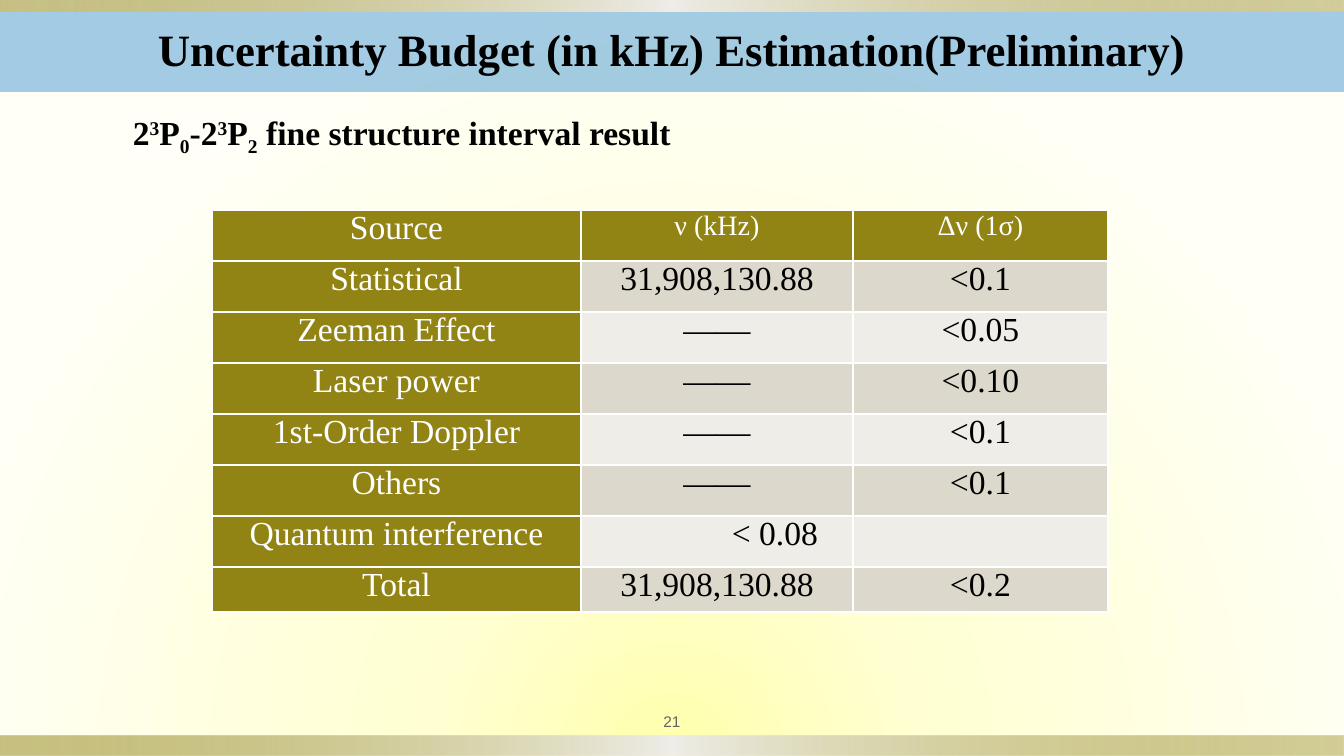
"""Build the uncertainty budget slide with its table of error sources."""
from pptx import Presentation
from pptx.dml.color import RGBColor as RGB
from pptx.enum.shapes import MSO_SHAPE as SHAPE
from pptx.enum.text import MSO_ANCHOR as ANCHOR, MSO_AUTO_SIZE as AUTO, PP_ALIGN as ALIGN
from pptx.oxml import parse_xml
from pptx.oxml.ns import nsdecls, qn
from pptx.util import Pt

PX = 12192000 / 1344
THEME = {
    "serif": "Times New Roman", "sans": "Arial",
    "title": 32, "body": 24, "unit": 20, "page": 11,
    "black": "000000", "white": "FFFFFF", "gray": "636363",
    "olive": "918415", "dark": "DCD9CC", "light": "EEEDE8", "blue": "0070C0",
    "glow": [(0, "FFFFAC", 100), (31, "FFFFD2", 100), (100, "FFFFF7", 100)],
    "metal": [(0, "918415", 50), (50, "EEEDE8", 100), (100, "918415", 40)],
}


def blend(root, stops, mode):
    """Turn the first solid fill under root into a gradient."""
    marks = "".join(
        f'<a:gs pos="{pos * 1000}"><a:srgbClr val="{hue}">'
        f'<a:alpha val="{alpha * 1000}"/></a:srgbClr></a:gs>'
        for pos, hue, alpha in stops)
    old = root.find(".//" + qn("a:solidFill"))
    old.getparent().replace(old, parse_xml(
        f'<a:gradFill {nsdecls("a")} rotWithShape="1">'
        f'<a:gsLst>{marks}</a:gsLst>{mode}</a:gradFill>'))


def write(para, text, size, hue="black", face="serif", bold=False, base=0):
    """Add one styled run to a paragraph."""
    run = para.add_run()
    run.text = text
    font = run.font
    font.name, font.size, font.bold = THEME[face], Pt(THEME[size]), bold
    font.color.rgb = RGB.from_string(THEME[hue])
    if base:
        font._element.set("baseline", str(base * 1000))


deck = Presentation()
deck.slide_width, deck.slide_height = round(1344 * PX), round(756 * PX)
slide = deck.slides.add_slide(deck.slide_layouts[5])
shapes = slide.shapes

slide.background.fill.solid()
blend(slide.element, THEME["glow"],
      '<a:path path="circle"><a:fillToRect l="50000" t="150000" r="50000" b="0"/></a:path>')

for top, high in ((736, 20), (0, 12)):
    bar = shapes.add_shape(SHAPE.RECTANGLE, 0, round(top * PX), deck.slide_width, round(high * PX))
    bar.shadow.inherit = False
    bar.line.fill.background()
    bar.fill.solid()
    blend(bar.element, THEME["metal"], '<a:lin ang="0" scaled="0"/>')

title = shapes.title
title.left, title.top = 0, round(12 * PX)
title.width, title.height = deck.slide_width, round(80 * PX)
title.fill.solid()
title.fill.fore_color.rgb = RGB.from_string(THEME["blue"])
tint = title.element.find(".//" + qn("a:srgbClr"))
tint.append(parse_xml(f'<a:alpha {nsdecls("a")} val="36000"/>'))
frame = title.text_frame
frame.auto_size, frame.vertical_anchor = AUTO.NONE, ANCHOR.TOP
frame.margin_top = round(10 * PX)
frame.paragraphs[0].alignment = ALIGN.CENTER
write(frame.paragraphs[0], "Uncertainty Budget (in kHz) Estimation(Preliminary)", "title", bold=True)

ROWS = [
    ("Source", "ν (kHz)", "Δν (1σ)"),
    ("Statistical", "31,908,130.88", "<0.1"),
    ("Zeeman Effect", "——", "<0.05"),
    ("Laser power", "——", "<0.10"),
    ("1st-Order Doppler", "——", "<0.1"),
    ("Others", "——", "<0.1"),
    ("Quantum interference", "< 0.08", ""),
    ("Total", "31,908,130.88", "<0.2"),
]
WIDE = (369, 272, 255)
HIGH = [51] * 7 + [45]
table = shapes.add_table(len(ROWS), len(WIDE), round(212 * PX), round(210 * PX),
                         round(sum(WIDE) * PX), round(sum(HIGH) * PX)).table
table.horz_banding = False
for col, wide in zip(table.columns, WIDE):
    col.width = round(wide * PX)
for r, (row, high) in enumerate(zip(ROWS, HIGH)):
    table.rows[r].height = round(high * PX)
    for c, text in enumerate(row):
        cell = table.cell(r, c)
        head = r == 0 or c == 0
        band = "olive" if head else "dark" if r % 2 else "light"
        cell.fill.solid()
        cell.fill.fore_color.rgb = RGB.from_string(THEME[band])
        cell.margin_top = cell.margin_bottom = 0
        for i, side in enumerate("LRTB"):
            cell._tc.tcPr.insert(i, parse_xml(
                f'<a:ln{side} {nsdecls("a")} w="12700"><a:solidFill>'
                f'<a:srgbClr val="{THEME["white"]}"/></a:solidFill></a:ln{side}>'))
        para = cell.text_frame.paragraphs[0]
        para.alignment, para.space_before = ALIGN.CENTER, Pt(6)
        if text:
            write(para, text, "unit" if r == 0 and c else "body", "white" if head else "black")

limit = table.cell(6, 1)
limit.margin_right = round(35 * PX)
limit.text_frame.paragraphs[0].alignment = ALIGN.RIGHT

page = shapes.add_textbox(*(round(n * PX) for n in (605, 706, 134, 31))).text_frame
page.word_wrap, page.vertical_anchor = True, ANCHOR.MIDDLE
page.margin_left = page.margin_right = round(5 * PX)
page.paragraphs[0].alignment = ALIGN.CENTER
write(page.paragraphs[0], "21", "page", "gray", "sans")

note = shapes.add_textbox(*(round(n * PX) for n in (123, 107, 564, 50))).text_frame
note.word_wrap, note.auto_size = False, AUTO.SHAPE_TO_FIT_TEXT
for text, base in (("2", 0), ("3", 30), ("P", 0), ("0", -25), ("-2", 0), ("3", 30),
                   ("P", 0), ("2", -25), (" fine structure interval result", 0)):
    write(note.paragraphs[0], text, "body", bold=True, base=base)

deck.save("out.pptx")
